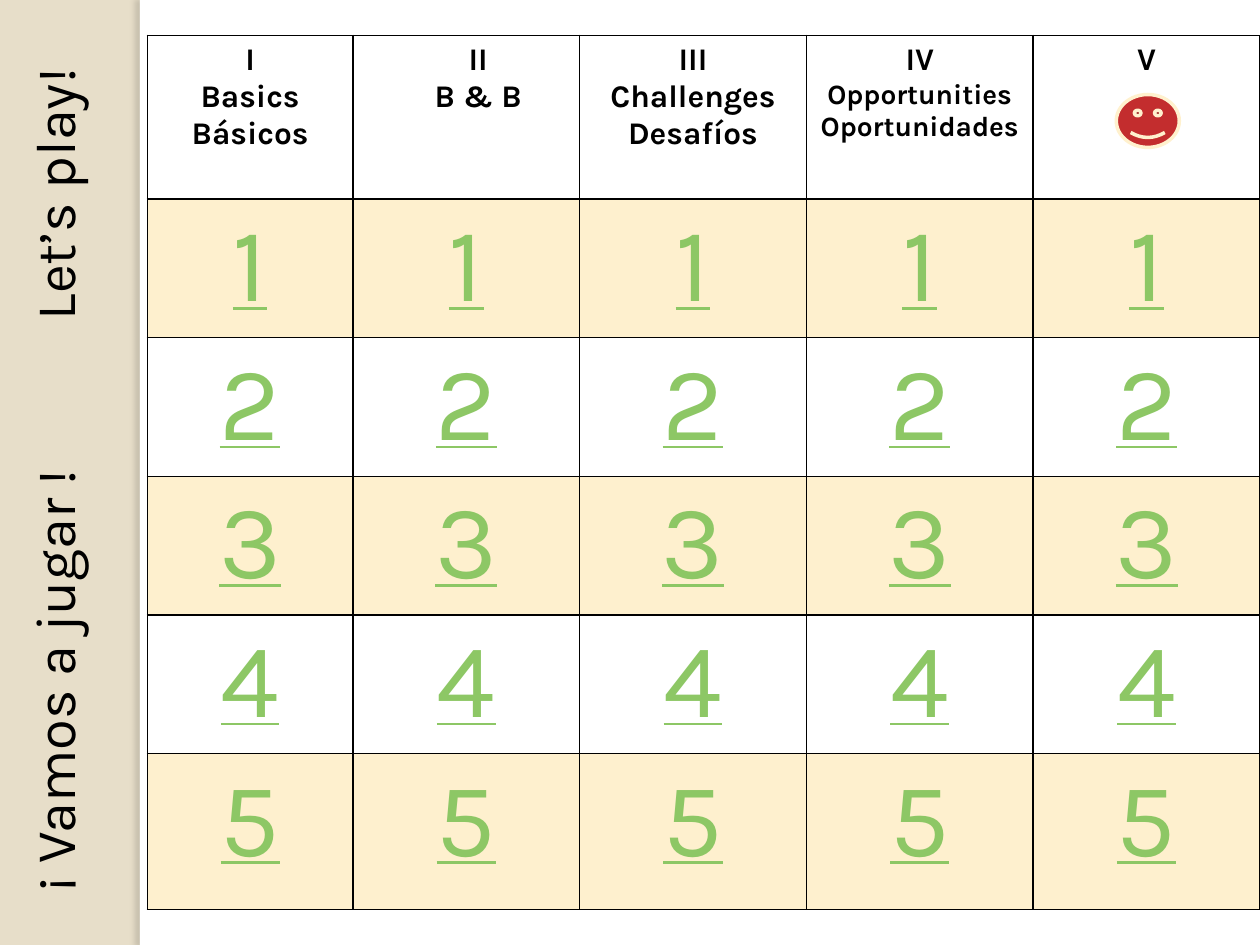
from lxml.etree import SubElement
from pptx import Presentation
from pptx.dml.color import RGBColor
from pptx.enum.shapes import MSO_SHAPE as Shape
from pptx.enum.text import MSO_ANCHOR as Anchor, PP_ALIGN as Align
from pptx.oxml.ns import qn
from pptx.util import Inches, Pt

COLORS = {
    "sand": "E7DEC9", "white": "FFFFFF", "ink": "000000", "green": "8DC765",
    "amber": "FEB80A", "red": "C32D2E", "cream": "FFF1CE", "shade": "736F63",
}
TOPICS = [
    (["I", "Basics", "Básicos"], 18),
    (["II", "B & B"], 18),
    (["III", "Challenges", "Desafíos"], 18),
    (["IV", "Opportunities", "Oportunidades"], 16),
    (["V"], 18),
]
COLUMN_WIDTHS = [1.63] + [1.8] * 4
ROW_HEIGHTS = [1.3] + [1.1] * 4 + [1.24]


def rgb(name):
    return RGBColor.from_string(COLORS[name])


def add_color(parent, name, alpha=100):
    color = SubElement(parent, qn("a:srgbClr"), val=COLORS[name])
    if alpha < 100:
        SubElement(color, qn("a:alpha"), val=str(alpha * 1000))


class GameBoard:
    font_name = "Karla"

    def __init__(self, deck):
        self.slide = deck.slides.add_slide(deck.slide_layouts[6])
        self.slide.background.fill.solid()
        self.slide.background.fill.fore_color.rgb = rgb("sand")

    def style(self, paragraph, size, color="ink", bold=False, underline=False):
        font = paragraph.font
        font.name, font.size = self.font_name, Pt(size)
        font.bold, font.underline = bold, underline
        font.color.rgb = rgb(color)

    def shape(self, kind, left, top, width, height, fill, line=None):
        shape = self.slide.shapes.add_shape(
            kind, Inches(left), Inches(top), Inches(width), Inches(height))
        shape.shadow.inherit = False
        shape.fill.solid()
        shape.fill.fore_color.rgb = rgb(fill)
        if line:
            shape.line.color.rgb = rgb(line)
            shape.line.width = Pt(2)
        else:
            shape.line.fill.background()
        return shape

    def edge(self, left, width):
        strip = self.shape(Shape.RECTANGLE, left, 0, width, 7.5, "white")
        effects = strip.element.spPr.find(qn("a:effectLst"))
        shadow = SubElement(effects, qn("a:outerShdw"), blurRad=str(Pt(3)),
                            dist=str(Pt(3)), dir="10800000", rotWithShape="0")
        add_color(shadow, "shade", 25)

    def side_banner(self, spanish, english, tab):
        banner = self.slide.shapes.add_textbox(
            Inches(0.11), Inches(0.18), Inches(0.74), Inches(7))
        frame = banner.text_frame
        frame.word_wrap = True
        frame.vertical_anchor = Anchor.TOP
        frame._txBody.bodyPr.set("vert", "vert270")
        paragraph = frame.paragraphs[0]
        paragraph.add_run().text = f"{spanish}\t{english}"
        paragraph.alignment = Align.LEFT
        self.style(paragraph, 32)
        properties = paragraph._p.pPr
        stops = SubElement(properties, qn("a:tabLst"))
        SubElement(stops, qn("a:tab"), pos=str(Inches(tab)), algn="l")
        properties.insert_element_before(stops, "a:defRPr", "a:extLst")

    def cell_frame(self, cell, tinted):
        properties = cell._tc.get_or_add_tcPr()
        for side in ("lnL", "lnR", "lnT", "lnB"):
            border = SubElement(properties, qn(f"a:{side}"), w=str(Pt(1)))
            add_color(SubElement(border, qn("a:solidFill")), "ink")
        if tinted:
            add_color(SubElement(properties, qn("a:solidFill")), "amber", 20)
        else:
            cell.fill.background()

    def cell_text(self, cell, lines):
        cell.text = "\n".join(lines)
        for paragraph in cell.text_frame.paragraphs:
            paragraph.alignment = Align.CENTER
        return cell.text_frame.paragraphs

    def table(self, left, top):
        grid = self.slide.shapes.add_table(
            len(ROW_HEIGHTS), len(COLUMN_WIDTHS), Inches(left), Inches(top),
            Inches(sum(COLUMN_WIDTHS)), Inches(sum(ROW_HEIGHTS))).table
        grid.first_row = grid.horz_banding = False
        for column, width in zip(grid.columns, COLUMN_WIDTHS):
            column.width = Inches(width)
        for level, height in enumerate(ROW_HEIGHTS):
            grid.rows[level].height = Inches(height)
            for index, (topic, size) in enumerate(TOPICS):
                cell = grid.cell(level, index)
                self.cell_frame(cell, tinted=level % 2 == 1)
                if level:
                    for number in self.cell_text(cell, [str(level)]):
                        self.style(number, 60, "green", underline=True)
                else:
                    for position, line in enumerate(self.cell_text(cell, topic)):
                        self.style(line, size if position else 18, bold=True)
        grid.cell(0, 1).margin_left = Inches(0.29)


def main():
    deck = Presentation()
    deck.slide_width, deck.slide_height = Inches(10), Inches(7.5)
    board = GameBoard(deck)
    board.shape(Shape.RECTANGLE, 1.11, 0, 8.89, 7.5, "white")
    board.edge(1.11, 0.08)
    board.table(1.17, 0.28)
    board.shape(Shape.SMILEY_FACE, 8.86, 0.75, 0.5, 0.42, "red", "cream")
    board.side_banner("¡ Vamos a jugar !", "Let’s play!", 4.54)
    deck.save("out.pptx")


if __name__ == "__main__":
    main()
